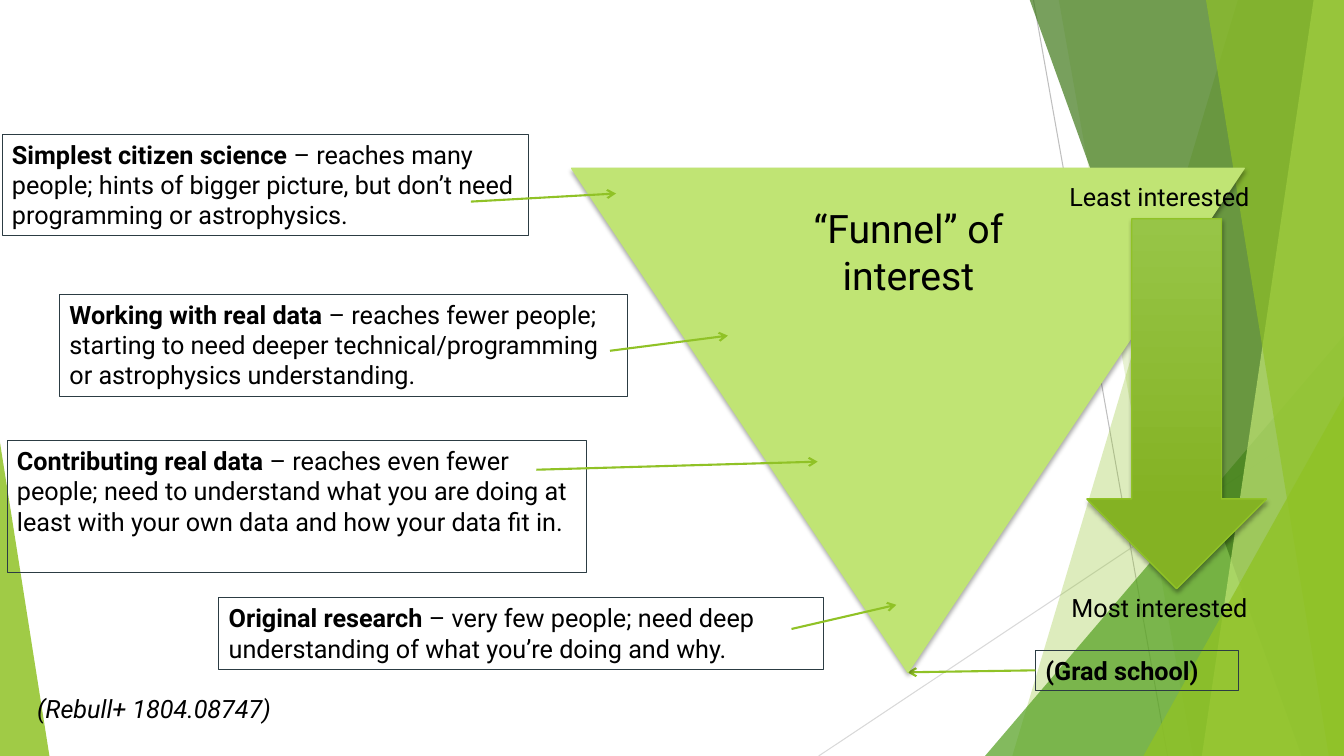
from lxml import etree
from pptx import Presentation
from pptx.dml.color import RGBColor
from pptx.enum.shapes import MSO_CONNECTOR as CONN, MSO_SHAPE as SHAPE
from pptx.enum.text import PP_ALIGN as ALIGN
from pptx.oxml import parse_xml
from pptx.oxml.ns import nsdecls, qn
from pptx.util import Inches, Pt

FONT = "Roboto"
BLACK = RGBColor(0x00, 0x00, 0x00)
SLATE = RGBColor(0x2C, 0x3C, 0x43)
GREEN = RGBColor(0x90, 0xC2, 0x26)
MID_GREEN = RGBColor(0x54, 0xA0, 0x21)
DARK_GREEN = RGBColor(0x3F, 0x78, 0x19)
LIME = RGBColor(0xC0, 0xE4, 0x74)
ARROW_TOP = RGBColor(0x97, 0xC5, 0x47)
ARROW_BOTTOM = RGBColor(0x84, 0xB2, 0x23)
GREY = RGBColor(0xBF, 0xBF, 0xBF)
LIGHT_GREY = RGBColor(0xD9, 0xD9, 0xD9)

WIDTH, HEIGHT = 13.33, 7.5

# Right-hand bands: top x, bottom x, colour, opacity in percent
BACK_BANDS = [(12.28, 10.04, GREEN, 30), (10.5, 11.83, GREEN, 20)]
FRONT_BANDS = [(10.21, 12.91, DARK_GREEN, 70), (13.03, 11.92, LIME, 70),
               (11.96, 13.18, GREEN, 65)]

# Box, bold lead, explanation, arrow start, arrow end
LEVELS = [
    ((0.02, 1.33, 5.22, 1.01), "Simplest citizen science ",
     "– reaches many people; hints of bigger picture, but don’t need "
     "programming or astrophysics.", (4.67, 2), (6.11, 1.92)),
    ((0.59, 2.92, 5.63, 1.01), "Working with real data ",
     "– reaches fewer people; starting to need deeper technical/programming "
     "or astrophysics understanding.", (6.05, 3.48), (7.22, 3.33)),
    ((0.07, 4.37, 5.75, 1.31), "Contributing real data ",
     "– reaches even fewer people; need to understand what you are doing at "
     "least with your own data and how your data fit in.",
     (5.32, 4.66), (8.11, 4.58)),
    ((2.17, 5.93, 6, 0.71), "Original research ",
     "– very few people; need deep understanding of what you’re doing and why.",
     (7.85, 6.24), (8.89, 6)),
]


def fill_translucent(sp, color, opacity):
    sp.shadow.inherit = False
    sp.line.fill.background()
    sp.fill.solid()
    sp.fill.fore_color.rgb = color
    clr = sp.fill._xPr.find(qn("a:solidFill"))[0]
    etree.SubElement(clr, qn("a:alpha")).set("val", str(opacity * 1000))


def add_shape(slide, kind, box):
    return slide.shapes.add_shape(kind, *map(Inches, box))


def add_line(slide, start, end, color, width):
    c = slide.shapes.add_connector(CONN.STRAIGHT, *map(Inches, (*start, *end)))
    c.line.color.rgb = color
    c.line.width = Pt(width)
    etree.SubElement(c._element.spPr, qn("a:effectLst"))
    return c


def add_arrow(slide, start, end):
    c = add_line(slide, start, end, GREEN, 1.5)
    etree.SubElement(c.line._get_or_add_ln(), qn("a:tailEnd")).set("type", "arrow")
    return c


def add_text(slide, box, runs, size=18, align=ALIGN.LEFT, border=False,
             wrap=True, bold=None, italic=None):
    """Add a text box; runs is a list of (text, bold) pairs or one string."""
    tb = slide.shapes.add_textbox(*map(Inches, box))
    if border:
        tb.line.color.rgb = SLATE
        tb.line.width = Pt(0.75)
    tf = tb.text_frame
    tf.word_wrap = wrap
    p = tf.paragraphs[0]
    p.alignment = align
    for text, is_bold in [(runs, bold)] if isinstance(runs, str) else runs:
        r = p.add_run()
        r.text = text
        r.font.bold = is_bold
    font = p.font
    font.name, font.size, font.italic = FONT, Pt(size), italic
    font.color.rgb = BLACK
    return tb


def add_shadow(sp):
    sp.shadow.inherit = False
    sp._element.spPr.find(qn("a:effectLst")).append(parse_xml(
        f'<a:outerShdw {nsdecls("a")} blurRad="{Pt(3)}" dist="{Pt(2)}" '
        'dir="5400000" rotWithShape="0"><a:srgbClr val="000000">'
        '<a:alpha val="35000"/></a:srgbClr></a:outerShdw>'))


def add_bands(slide, bands, right, bottom):
    """Draw bands that reach from a slanted left edge to the right edge."""
    top = -0.01
    for top_x, bottom_x, color, opacity in bands:
        corners = [(right, top), (right, bottom), (bottom_x, bottom)]
        fb = slide.shapes.build_freeform(Inches(top_x), Inches(top))
        fb.add_line_segments([(Inches(x), Inches(y)) for x, y in corners])
        fill_translucent(fb.convert_to_shape(), color, opacity)


def add_corner(slide, box, apex, color, opacity):
    sp = add_shape(slide, SHAPE.ISOSCELES_TRIANGLE, box)
    sp.adjustments[0] = apex
    fill_translucent(sp, color, opacity)


def add_backdrop(slide, right, bottom):
    add_line(slide, (10.25, 0), (11.58, bottom), GREY, 0.75)
    add_line(slide, (right, 4.03), (8.12, bottom), LIGHT_GREY, 0.75)
    add_bands(slide, BACK_BANDS, right, bottom)
    add_corner(slide, (right - 3.56, bottom - 4.17, 3.56, 4.17), 1, MID_GREEN, 72)
    add_bands(slide, FRONT_BANDS, right, bottom)
    add_corner(slide, (right - 1.99, bottom - 3.57, 1.99, 3.57), 1, GREEN, 80)
    add_corner(slide, (0, bottom - 3.11, 0.49, 3.11), 0, GREEN, 85)


def add_funnel(slide, left, top, width, height):
    funnel = add_shape(slide, SHAPE.ISOSCELES_TRIANGLE, (left, top, width, height))
    funnel._element.spPr.find(qn("a:xfrm")).set("flipV", "1")
    funnel.fill.solid()
    funnel.fill.fore_color.rgb = LIME
    funnel.line.color.rgb = LIME

    label_w = 3.44
    label_x = left + 4.11
    arrow_w, arrow_h = 1.78, 3.67
    arrow_x, arrow_y = left + 5.11, top + 0.5
    add_text(slide, (label_x, arrow_y - 0.42, label_w, 0.42),
             "Least interested", align=ALIGN.CENTER)
    arrow = add_shape(slide, SHAPE.DOWN_ARROW, (arrow_x, arrow_y, arrow_w, arrow_h))
    arrow.fill.gradient()
    arrow.fill.gradient_angle = 270
    stops = zip(arrow.fill.gradient_stops, (0, 0.78), (ARROW_TOP, ARROW_BOTTOM))
    for stop, position, color in stops:
        stop.position = position
        stop.color.rgb = color
    arrow.line.color.rgb = GREEN
    for sp in (funnel, arrow):
        sp.line.width = Pt(1)
        add_shadow(sp)
    add_text(slide, (label_x, arrow_y + arrow_h - 0.01, label_w, 0.42),
             "Most interested", align=ALIGN.CENTER)
    add_text(slide, (left + 1.62, top + 0.31, label_w, 0.57),
             "“Funnel” of interest", size=28, align=ALIGN.CENTER)


def add_grad_school(slide, box, tip):
    label = add_text(slide, box, "(Grad school)", border=True, bold=True)
    arrow = add_arrow(slide, box[:2], tip)
    arrow.begin_connect(label, 1)


def main():
    prs = Presentation()
    prs.slide_width, prs.slide_height = Inches(WIDTH), Inches(HEIGHT)
    slide = prs.slides.add_slide(prs.slide_layouts[6])
    add_backdrop(slide, WIDTH, HEIGHT)
    for box, lead, detail, _, _ in LEVELS:
        add_text(slide, box, [(lead, True), (detail, False)], border=True)
    add_grad_school(slide, (10.27, 6.45, 2.01, 0.4), (9, 6.67))
    add_funnel(slide, 5.67, 1.67, 6.67, 5)
    for *_, start, end in LEVELS:
        add_arrow(slide, start, end)
    add_text(slide, (0.27, 6.83, 2.66, 0.4), "(Rebull+ 1804.08747)",
             wrap=False, italic=True)
    prs.save("out.pptx")


if __name__ == "__main__":
    main()
